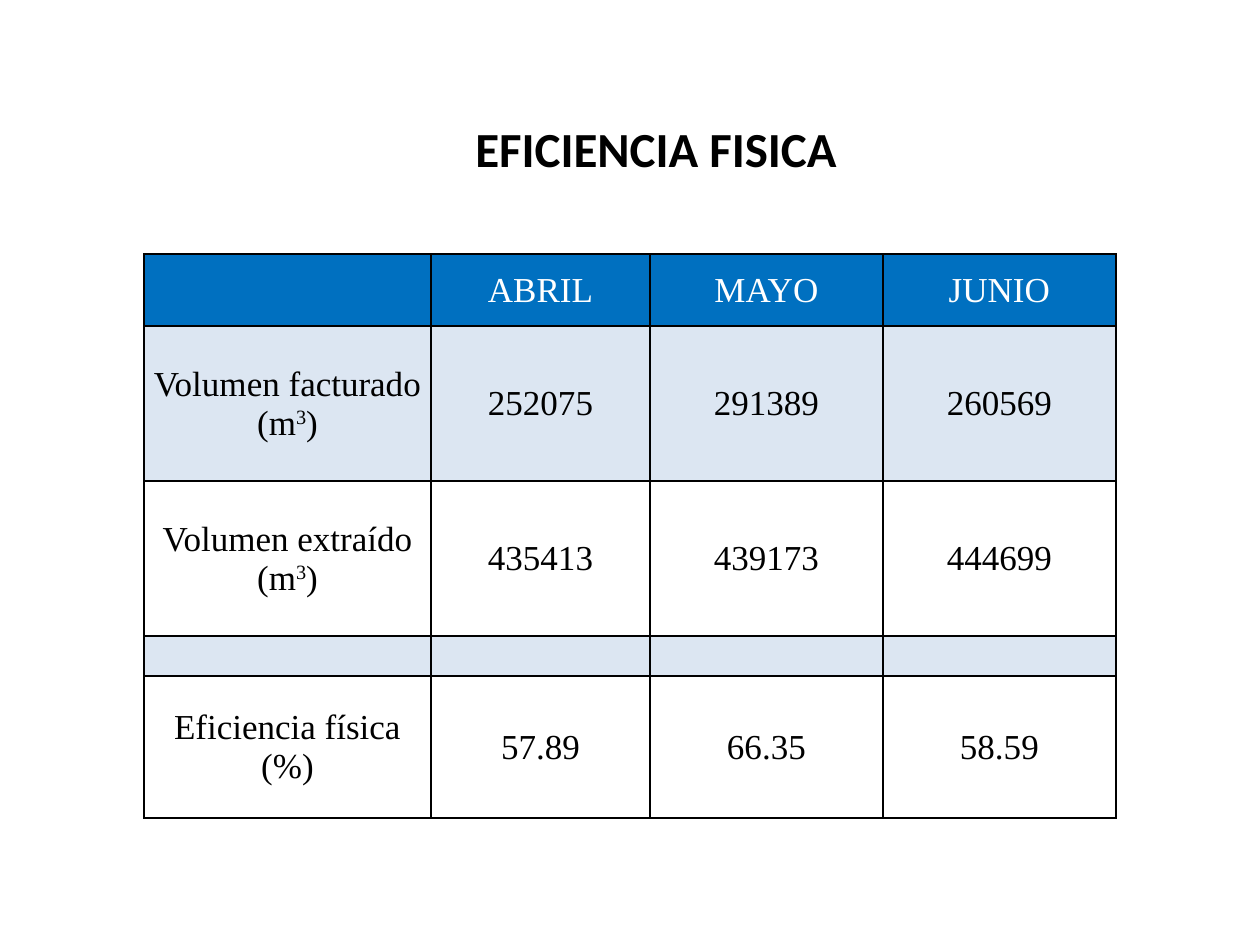
from dataclasses import dataclass

from lxml.etree import SubElement
from pptx import Presentation
from pptx.dml.color import RGBColor
from pptx.enum.text import MSO_ANCHOR, PP_ALIGN
from pptx.oxml.ns import qn
from pptx.util import Emu, Pt

EMU_PER_PX = 914400 / 126
COLUMN_WIDTHS = (287, 219, 233, 233)
ROW_HEIGHTS = (72, 155, 155, 40, 142)
SUPERSCRIPT_THREE = ("3", True)
CUBIC_METRES = [(" (m", False), SUPERSCRIPT_THREE, (")", False)]
ROWS = (
    ("", "ABRIL", "MAYO", "JUNIO"),
    ([("Volumen facturado", False), *CUBIC_METRES], "252075", "291389", "260569"),
    ([("Volumen extraído", False), *CUBIC_METRES], "435413", "439173", "444699"),
    ("", "", "", ""),
    ("Eficiencia física (%)", "57.89", "66.35", "58.59"),
)


@dataclass(frozen=True)
class Theme:
    """Colours, fonts and type sizes of the slide."""

    header: str = "0070C0"
    band: str = "DCE6F2"
    dark: str = "000000"
    light: str = "FFFFFF"
    title_font: str = "Calibri"
    table_font: str = "Times New Roman"
    title_size: int = 28
    table_size: int = 20
    empty_size: int = 18
    border_width: int = 1


THEME = Theme()


def px(length):
    """Turn whole pixels into EMU."""
    return Emu(round(length * EMU_PER_PX))


def style_paragraph(paragraph, font_name, size, color, bold=False):
    """Centre a paragraph and set its font."""
    paragraph.alignment = PP_ALIGN.CENTER
    font = paragraph.font
    font.name, font.size, font.bold = font_name, Pt(size), bold
    font.color.rgb = RGBColor.from_string(color)


def add_title(page, text):
    """Place and format the title placeholder."""
    title = page.shapes.title
    title.left, title.top, title.width, title.height = map(px, (84, 26, 1144, 158))
    frame = title.text_frame
    frame.text = text
    frame.vertical_anchor = MSO_ANCHOR.BOTTOM
    style_paragraph(frame.paragraphs[0], THEME.title_font, THEME.title_size, THEME.dark, True)


def draw_borders(cell):
    """Draw a thin solid line on each side of a cell."""
    properties = cell._tc.get_or_add_tcPr()
    for index, side in enumerate(("lnL", "lnR", "lnT", "lnB")):
        line = properties.makeelement(qn(f"a:{side}"), {"w": str(Pt(THEME.border_width))})
        fill = SubElement(line, qn("a:solidFill"))
        SubElement(fill, qn("a:srgbClr"), val=THEME.dark)
        properties.insert(index, line)


def write_cell(cell, content, text_color):
    """Write plain text, or spans marked as superscript or not."""
    paragraph = cell.text_frame.paragraphs[0]
    spans = [(content, False)] if isinstance(content, str) else content
    for text, raised in spans:
        if text:
            span = paragraph.add_run()
            span.text = text
            if raised:
                span._r.get_or_add_rPr().set("baseline", "30000")
    size = THEME.table_size if content else THEME.empty_size
    style_paragraph(paragraph, THEME.table_font, size, text_color)


def format_cell(cell, fill_color):
    """Set the fill, borders, margins and anchor of a cell."""
    if fill_color:
        cell.fill.solid()
        cell.fill.fore_color.rgb = RGBColor.from_string(fill_color)
    else:
        cell.fill.background()
    draw_borders(cell)
    cell.margin_left = cell.margin_right = cell.margin_top = px(1)
    cell.margin_bottom = 0
    cell.vertical_anchor = MSO_ANCHOR.MIDDLE


def add_efficiency_table(page):
    """Build the table with a header row and alternating bands."""
    frame = page.shapes.add_table(
        len(ROWS), len(COLUMN_WIDTHS), px(144), px(254), px(sum(COLUMN_WIDTHS)), px(sum(ROW_HEIGHTS))
    )
    table = frame.table
    for column, width in zip(table.columns, COLUMN_WIDTHS):
        column.width = px(width)
    for row, height in zip(table.rows, ROW_HEIGHTS):
        row.height = px(height)
    for row_index, contents in enumerate(ROWS):
        is_header = row_index == 0
        fill_color = THEME.header if is_header else THEME.band if row_index % 2 else None
        text_color = THEME.light if is_header else THEME.dark
        for column_index, content in enumerate(contents):
            cell = table.cell(row_index, column_index)
            write_cell(cell, content, text_color)
            format_cell(cell, fill_color)


def main():
    """Build and save the slide."""
    deck = Presentation()
    deck.slide_width, deck.slide_height = px(1260), px(945)
    page = deck.slides.add_slide(deck.slide_layouts.get_by_name("Title Only"))
    add_title(page, "EFICIENCIA FISICA")
    add_efficiency_table(page)
    deck.save("out.pptx")


if __name__ == "__main__":
    main()
